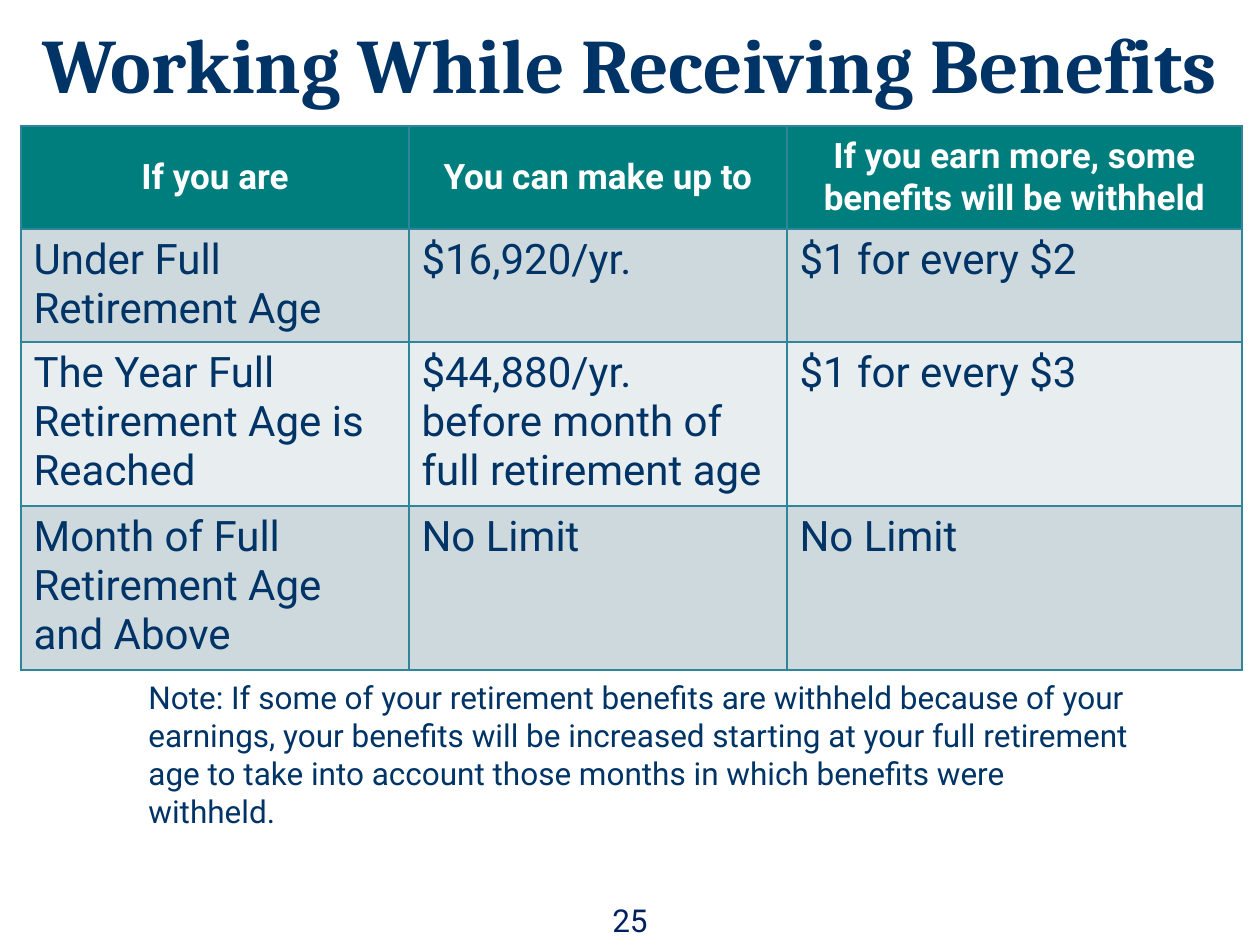
from lxml.etree import SubElement
from pptx import Presentation
from pptx.dml.color import RGBColor
from pptx.enum.text import MSO_ANCHOR, MSO_AUTO_SIZE, PP_ALIGN
from pptx.oxml.ns import qn
from pptx.util import Pt

EMU_PER_PX = 914400 // 126
COLORS = {
    "navy": "003366", "number": "002060", "white": "FFFFFF", "header": "007D7D",
    "band_dark": "CED9DE", "band_light": "E8EDEF", "border": "31859B",
}
COLUMN_WIDTHS = [388, 378, 455]
ROW_HEIGHTS = [103, 113, 164, 164]
ROWS = [
    ["If you are", "You can make up to",
     "If you earn more, some benefits will be withheld"],
    ["Under Full Retirement Age", "$16,920/yr.", "$1 for every $2"],
    ["The Year Full Retirement Age is Reached",
     "$44,880/yr.\nbefore month of full retirement age", "$1 for every $3"],
    ["Month of Full Retirement Age\nand Above", "No Limit", "No Limit"],
]
NOTE = ("Note: If some of your retirement benefits are withheld because of your "
        "earnings, your benefits will be increased starting at your full "
        "retirement age to take into account those months in which benefits "
        "were withheld.")


def px(n):
    return n * EMU_PER_PX


def rgb(name):
    return RGBColor.from_string(COLORS[name])


def write_text(tf, text, size=18, font="Roboto", color="navy", bold=False,
               align=PP_ALIGN.LEFT, anchor=MSO_ANCHOR.TOP):
    tf.word_wrap = True
    tf.vertical_anchor = anchor
    p = tf.paragraphs[0]
    p.text = text
    p.alignment = align
    for r in p.runs:
        r.font.name = font
        r.font.size = Pt(size)
        r.font.bold = bold
        r.font.color.rgb = rgb(color)


def add_title(slide, text):
    sp = slide.shapes.title
    sp.left, sp.top, sp.width, sp.height = px(0), px(10), px(1260), px(106)
    write_text(sp.text_frame, text, size=44, font="Cambria", bold=True,
               align=PP_ALIGN.CENTER)
    sp.text_frame.auto_size = MSO_AUTO_SIZE.NONE


def add_text(slide, text, x, y, w, h, **fmt):
    sp = slide.shapes.add_textbox(px(x), px(y), px(w), px(h))
    write_text(sp.text_frame, text, **fmt)


def add_borders(cell):
    tcPr = cell._tc.get_or_add_tcPr()
    for side in ("lnL", "lnR", "lnT", "lnB"):
        ln = SubElement(tcPr, qn(f"a:{side}"), w=str(Pt(1)))
        fill = SubElement(ln, qn("a:solidFill"))
        SubElement(fill, qn("a:srgbClr"), val=COLORS["border"])


def format_cell(cell, text, row):
    # Borders come before the fill in the cell properties
    add_borders(cell)
    cell.fill.solid()
    if row == 0:
        cell.fill.fore_color.rgb = rgb("header")
        write_text(cell.text_frame, text, size=20, color="white", bold=True,
                   align=PP_ALIGN.CENTER)
        cell.vertical_anchor = MSO_ANCHOR.MIDDLE
    else:
        cell.fill.fore_color.rgb = rgb("band_dark" if row % 2 else "band_light")
        write_text(cell.text_frame, text, size=24)
        cell.vertical_anchor = MSO_ANCHOR.TOP


def add_limits_table(slide, x, y):
    table = slide.shapes.add_table(
        len(ROWS), len(COLUMN_WIDTHS), px(x), px(y),
        px(sum(COLUMN_WIDTHS)), px(sum(ROW_HEIGHTS))).table
    table.horz_banding = False
    for column, width in zip(table.columns, COLUMN_WIDTHS):
        column.width = px(width)
    for i, (row, height) in enumerate(zip(table.rows, ROW_HEIGHTS)):
        row.height = px(height)
        for cell, text in zip(row.cells, ROWS[i]):
            format_cell(cell, text, i)


def main():
    prs = Presentation()
    prs.slide_width, prs.slide_height = px(1260), px(945)
    slide = prs.slides.add_slide(prs.slide_layouts[5])

    # Earnings limits
    add_limits_table(slide, 21, 126)

    # Note below the table
    add_text(slide, NOTE, 136, 672, 1014, 127)

    # Title
    add_title(slide, "Working While Receiving Benefits")

    # Slide number
    add_text(slide, "25", 483, 895, 294, 50, color="number",
             align=PP_ALIGN.CENTER, anchor=MSO_ANCHOR.MIDDLE)

    prs.save("out.pptx")


if __name__ == "__main__":
    main()
